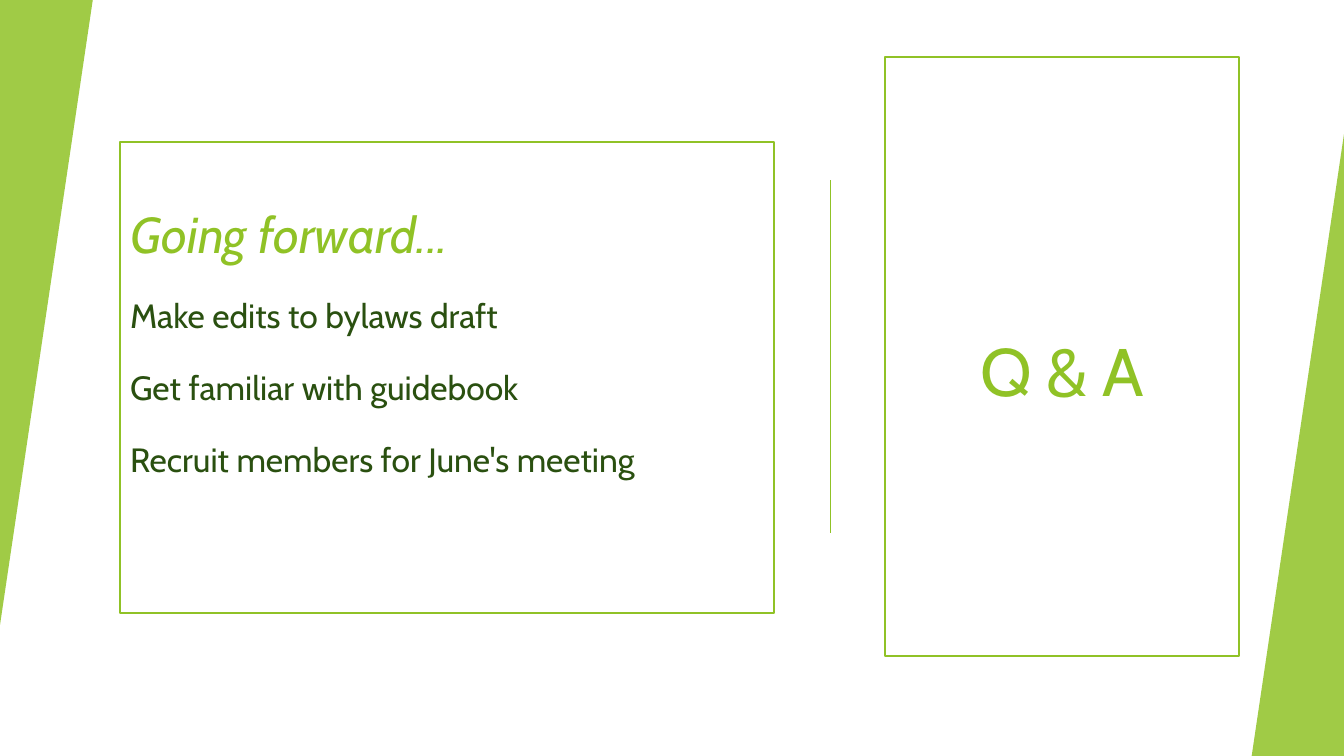
from pptx import Presentation
from pptx.dml.color import RGBColor
from pptx.enum.shapes import MSO_CONNECTOR, MSO_SHAPE
from pptx.enum.text import MSO_ANCHOR, MSO_AUTO_SIZE, PP_ALIGN
from pptx.oxml.ns import qn
from pptx.util import Inches, Pt
from lxml import etree

GREEN = RGBColor(0x90, 0xC2, 0x26)
DARK = RGBColor(0x2A, 0x50, 0x10)
WHITE = RGBColor(0xFF, 0xFF, 0xFF)
FONT = "Cabin"
TRIANGLE, RECT = MSO_SHAPE.ISOSCELES_TRIANGLE, MSO_SHAPE.RECTANGLE
STRAIGHT = MSO_CONNECTOR.STRAIGHT
TOP, MIDDLE = MSO_ANCHOR.TOP, MSO_ANCHOR.MIDDLE
LEFT, CENTER = PP_ALIGN.LEFT, PP_ALIGN.CENTER
NO_FIT = MSO_AUTO_SIZE.NONE
TITLE_ONLY = 5

ITEMS = [
    "Make edits to bylaws draft",
    "Get familiar with guidebook",
    "Recruit members for June's meeting",
]


def add_wedge(slide, left, top, turn):
    """Add a see-through right triangle at a slide edge."""
    wedge = slide.shapes.add_shape(
        TRIANGLE, Inches(left), Inches(top), Inches(0.92), Inches(6.2))
    wedge.adjustments[0] = 1
    wedge.rotation = turn
    wedge.shadow.inherit = False
    wedge.fill.solid()
    wedge.fill.fore_color.rgb = GREEN
    wedge.line.fill.background()
    color = wedge.fill._xPr.find(qn("a:solidFill"))[0]
    etree.SubElement(color, qn("a:alpha")).set("val", "85000")


def add_rule(slide, x, top, bottom):
    rule = slide.shapes.add_connector(
        STRAIGHT, Inches(x), Inches(top), Inches(x), Inches(bottom))
    rule.line.color.rgb = GREEN
    rule.line.width = Pt(1)
    etree.SubElement(rule._element.spPr, qn("a:effectLst"))


def style_frame(shape, anchor, inset):
    """Give a shape the white fill, green outline and text settings."""
    shape.fill.solid()
    shape.fill.fore_color.rgb = WHITE
    shape.line.color.rgb = GREEN
    shape.line.width = Pt(1.5)
    frame = shape.text_frame
    frame.word_wrap = True
    frame.auto_size = NO_FIT
    frame.vertical_anchor = anchor
    frame.margin_top = Inches(inset)
    return frame


def write(para, text, size, color, align=LEFT, before=0, italic=False):
    para.alignment = align
    para.line_spacing = 0.9
    para.space_before = Pt(before)
    run = para.add_run()
    run.text = text
    run.font.name = FONT
    run.font.size = Pt(size)
    run.font.italic = italic
    run.font.color.rgb = color


def add_plan(slide):
    title = slide.shapes.title
    title.left, title.top = Inches(1.19), Inches(1.41)
    title.width, title.height = Inches(6.49), Inches(4.67)
    frame = style_frame(title, TOP, 0.67)
    write(frame.paragraphs[0], "Going forward...", 36, GREEN, italic=True)
    for item in ITEMS:
        write(frame.add_paragraph(), item, 24, DARK, before=25.5)


def add_panel(slide):
    panel = slide.shapes.add_shape(
        RECT, Inches(8.78), Inches(0.57), Inches(3.51), Inches(5.94))
    panel.shadow.inherit = False
    frame = style_frame(panel, MIDDLE, 0.41)
    write(frame.paragraphs[0], "Q & A", 48, GREEN, CENTER)


def main():
    deck = Presentation()
    deck.slide_width, deck.slide_height = Inches(13.33), Inches(7.5)
    slide = deck.slides.add_slide(deck.slide_layouts[TITLE_ONLY])
    add_plan(slide)
    add_wedge(slide, 0, 0, 180)
    add_rule(slide, 8.24, 1.79, 5.29)
    add_wedge(slide, 12.41, 1.33, 0)
    add_panel(slide)
    deck.save("out.pptx")


if __name__ == "__main__":
    main()
